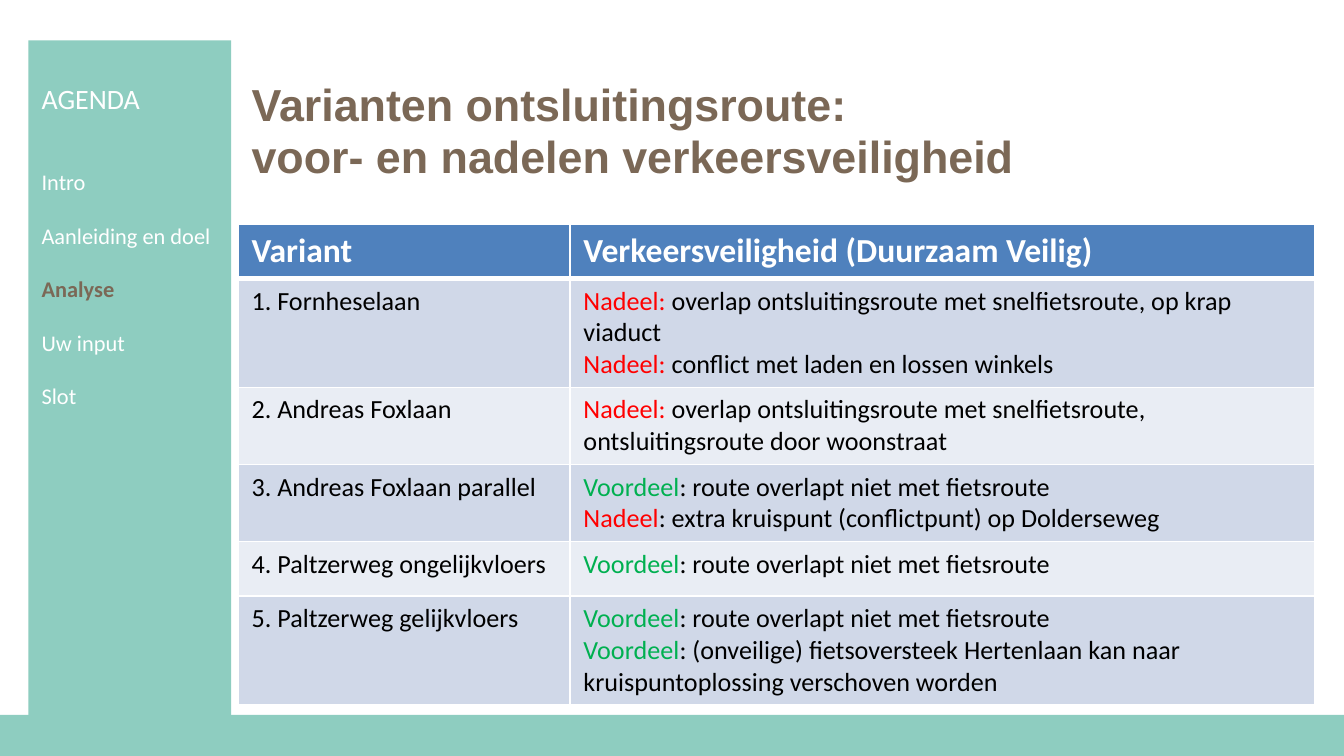
"""Build the slide comparing the road safety of five access route variants."""
from dataclasses import dataclass

from lxml import etree
from pptx import Presentation
from pptx.dml.color import RGBColor
from pptx.enum import shapes, text
from pptx.oxml.ns import qn
from pptx.util import Pt

MINT = RGBColor(0x8E, 0xCD, 0xC0)
BROWN = RGBColor(0x7B, 0x68, 0x56)
BLUE = RGBColor(0x4F, 0x81, 0xBD)
BAND_DARK = RGBColor(0xD0, 0xD8, 0xE8)
BAND_LIGHT = RGBColor(0xE9, 0xED, 0xF4)
WHITE = RGBColor(0xFF, 0xFF, 0xFF)
BLACK = RGBColor(0, 0, 0)
RED = RGBColor(0xFF, 0, 0)
GREEN = RGBColor(0, 0xB0, 0x50)


@dataclass(frozen=True)
class Box:
    left: float
    top: float
    width: float
    height: float

    def lengths(self) -> tuple:
        return Pt(self.left), Pt(self.top), Pt(self.width), Pt(self.height)


@dataclass(frozen=True)
class Remark:
    label: str
    detail: str
    color: RGBColor


@dataclass(frozen=True)
class Variant:
    name: str
    remarks: tuple


@dataclass(frozen=True)
class AgendaItem:
    name: str
    size: float = 12
    space_before: float = 14.3
    color: RGBColor = WHITE
    bold: bool = False


NO_OVERLAP = Remark("Voordeel", ": route overlapt niet met fietsroute", GREEN)
VARIANTS = (
    Variant("1. Fornheselaan", (
        Remark("Nadeel: ", "overlap ontsluitingsroute met snelfietsroute, op krap viaduct", RED),
        Remark("Nadeel: ", "conflict met laden en lossen winkels", RED))),
    Variant("2. Andreas Foxlaan", (
        Remark("Nadeel: ", "overlap ontsluitingsroute met snelfietsroute, "
               "ontsluitingsroute door woonstraat", RED),)),
    Variant("3. Andreas Foxlaan parallel", (
        NO_OVERLAP,
        Remark("Nadeel", ": extra kruispunt (conflictpunt) op Dolderseweg", RED))),
    Variant("4. Paltzerweg ongelijkvloers", (NO_OVERLAP,)),
    Variant("5. Paltzerweg gelijkvloers", (
        NO_OVERLAP,
        Remark("Voordeel", ": (onveilige) fietsoversteek Hertenlaan kan naar "
               "kruispuntoplossing verschoven worden", GREEN))),
)
AGENDA = (
    AgendaItem("AGENDA", size=15, space_before=0),
    AgendaItem("Intro", space_before=28.6),
    AgendaItem("Aanleiding en doel"),
    AgendaItem("Analyse", color=BROWN, bold=True),
    AgendaItem("Uw input"),
    AgendaItem("Slot"),
)


def add_run(paragraph, wording: str, size: float, color: RGBColor,
            bold: bool = False, font: str = "Calibri") -> None:
    run = paragraph.add_run()
    run.text = wording
    run.font.name = font
    run.font.size = Pt(size)
    run.font.bold = bold
    run.font.color.rgb = color


def next_paragraph(frame, index: int):
    return frame.add_paragraph() if index else frame.paragraphs[0]


def add_panel(slide, box: Box):
    shape = slide.shapes.add_shape(shapes.MSO_SHAPE.RECTANGLE, *box.lengths())
    shape.shadow.inherit = False
    shape.fill.solid()
    shape.fill.fore_color.rgb = MINT
    shape.line.fill.background()
    return shape


def add_agenda(slide, box: Box) -> None:
    frame = add_panel(slide, box).text_frame
    frame.word_wrap = True
    frame.vertical_anchor = text.MSO_ANCHOR.TOP
    frame.margin_top = Pt(22)
    for index, item in enumerate(AGENDA):
        paragraph = next_paragraph(frame, index)
        paragraph.alignment = text.PP_ALIGN.LEFT
        paragraph.space_before = Pt(item.space_before)
        add_run(paragraph, item.name, item.size, item.color, item.bold)


def set_title(slide, box: Box, lines: tuple) -> None:
    title = slide.shapes.title
    title.left, title.top, title.width, title.height = box.lengths()
    frame = title.text_frame
    frame.margin_left = frame.margin_top = frame.margin_right = frame.margin_bottom = 0
    frame.word_wrap = True
    frame.auto_size = text.MSO_AUTO_SIZE.NONE
    frame.vertical_anchor = text.MSO_ANCHOR.TOP
    paragraph = frame.paragraphs[0]
    paragraph.alignment = text.PP_ALIGN.LEFT
    paragraph.line_spacing = Pt(28)
    for index, line in enumerate(lines):
        if index:
            paragraph.add_line_break()
        add_run(paragraph, line, 24, BROWN, True, "Arial")


def style_cell(cell, fill: RGBColor, top: float, bottom: float) -> None:
    properties = cell._tc.get_or_add_tcPr()
    for side, width in (("L", 1), ("R", 1), ("T", top), ("B", bottom)):
        border = etree.SubElement(properties, qn(f"a:ln{side}"), w=str(Pt(width)))
        solid = etree.SubElement(border, qn("a:solidFill"))
        etree.SubElement(solid, qn("a:srgbClr"), val=str(WHITE))
    cell.fill.solid()
    cell.fill.fore_color.rgb = fill


def add_variant_table(slide, box: Box, columns: tuple, headings: tuple) -> None:
    frame = slide.shapes.add_table(len(VARIANTS) + 1, len(columns), *box.lengths())
    table = frame.table
    for column, width in zip(table.columns, columns):
        column.width = Pt(width)
    for row in table.rows:
        row.height = Pt(29.2)
    frame.height = Pt(box.height)
    for column, heading in enumerate(headings):
        cell = table.cell(0, column)
        style_cell(cell, BLUE, 1, 3)
        add_run(cell.text_frame.paragraphs[0], heading, 18, WHITE, True)
    for row, variant in enumerate(VARIANTS, start=1):
        name_cell, remark_cell = table.cell(row, 0), table.cell(row, 1)
        for cell in (name_cell, remark_cell):
            style_cell(cell, BAND_DARK if row % 2 else BAND_LIGHT, 3 if row == 1 else 1, 1)
        add_run(name_cell.text_frame.paragraphs[0], variant.name, 14, BLACK)
        for index, remark in enumerate(variant.remarks):
            paragraph = next_paragraph(remark_cell.text_frame, index)
            add_run(paragraph, remark.label, 14, remark.color)
            add_run(paragraph, remark.detail, 14, BLACK)


def main() -> None:
    presentation = Presentation()
    presentation.slide_width, presentation.slide_height = Pt(720), Pt(405)
    slide = presentation.slides.add_slide(presentation.slide_layouts[5])
    add_panel(slide, Box(0, 383, 720, 22))
    set_title(slide, Box(134.8, 41.8, 493.2, 78.5),
              ("Varianten ontsluitingsroute:", "voor- en nadelen verkeersveiligheid"))
    add_variant_table(slide, Box(127.6, 120, 576.7, 254.9), (177.8, 398.9),
                      ("Variant", "Verkeersveiligheid (Duurzaam Veilig)"))
    add_agenda(slide, Box(15.2, 21.6, 108.6, 364.3))
    presentation.save("out.pptx")


if __name__ == "__main__":
    main()
